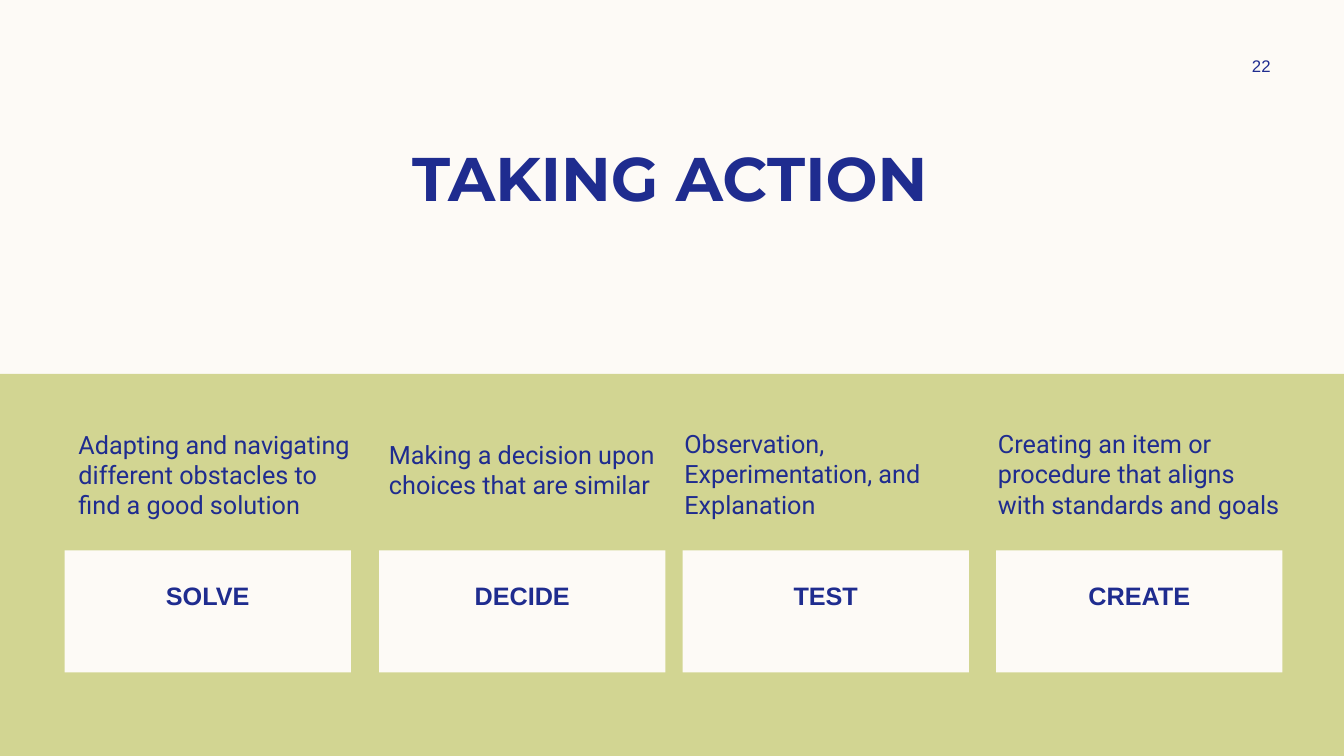
import pptx
import pptx.util
import pptx.dml.color
import pptx.enum.shapes
import pptx.enum.text

Inches = pptx.util.Inches
Pt = pptx.util.Pt
Align = pptx.enum.text.PP_ALIGN
Anchor = pptx.enum.text.MSO_ANCHOR

WIDTH, HEIGHT = 13.33, 7.5
COLOURS = {"paper": "FDFAF6", "olive": "D2D592", "navy": "1F2C8F"}
CARD_WIDTH, CARD_HEIGHT = 2.84, 1.21
CARD_TOP = 1.75
SUMMARY_WIDTH = 3
LINE_HEIGHT = 0.3

ACTIONS = [
    ("SOLVE", 0.64, "Adapting and navigating different obstacles to find a good solution", 0.68, 0.5, 3),
    ("DECIDE", 3.76, "Making a decision upon choices that are similar", 3.76, 0.6, 2),
    ("TEST", 6.77, "Observation, Experimentation, and Explanation", 6.69, 0.49, 3),
    ("CREATE", 9.88, "Creating an item or procedure that aligns with standards and goals", 9.8, 0.49, 3),
]


def colour(name):
    return pptx.dml.color.RGBColor.from_string(COLOURS[name])


def add_panel(slide, box, fill):
    panel = slide.shapes.add_shape(
        pptx.enum.shapes.MSO_SHAPE.RECTANGLE, *map(Inches, box))
    panel.shadow.inherit = False
    panel.fill.solid()
    panel.fill.fore_color.rgb = colour(fill)
    panel.line.fill.background()
    return panel


def write(holder, words, font, size, bold=False, align=Align.LEFT, anchor=Anchor.TOP):
    frame = holder.text_frame
    frame.word_wrap = True
    frame.vertical_anchor = anchor
    paragraph = frame.paragraphs[0]
    paragraph.alignment = align
    run = paragraph.add_run()
    run.text = words
    run.font.name = font
    run.font.size = Pt(size)
    run.font.bold = bold
    run.font.color.rgb = colour("navy")
    return frame


def add_words(slide, box, *words, **style):
    return write(slide.shapes.add_textbox(*map(Inches, box)), *words, **style)


def add_heading(slide, box):
    left, top, width, height = box
    add_words(slide, (left + 0.83, top + 0.56, width - 1.7, height - 2.1),
              "TAKING ACTION", "Montserrat", 44,
              bold=True, align=Align.CENTER, anchor=Anchor.BOTTOM)
    add_words(slide, (left + width - 1.36, top + 0.5, 1.08, 0.3),
              "22", "Arial", 12, align=Align.CENTER, anchor=Anchor.MIDDLE)


def add_card(slide, box, label):
    card = add_panel(slide, box, "paper")
    frame = write(card, label, "Arial", 18, bold=True, align=Align.CENTER)
    frame.margin_left = frame.margin_right = 0
    frame.margin_top = Inches(0.3)
    frame.margin_bottom = Inches(0.05)


def add_actions(slide, box):
    left, top, width, height = box
    add_panel(slide, box, "olive")
    for label, card_left, summary, summary_left, summary_top, lines in ACTIONS:
        add_card(slide, (left + card_left, top + CARD_TOP, CARD_WIDTH, CARD_HEIGHT), label)
        frame = add_words(
            slide,
            (left + summary_left, top + summary_top, SUMMARY_WIDTH, lines * LINE_HEIGHT + 0.11),
            summary, "Roboto", 18)
        frame.auto_size = pptx.enum.text.MSO_AUTO_SIZE.SHAPE_TO_FIT_TEXT


def main():
    deck = pptx.Presentation()
    deck.slide_width = Inches(WIDTH)
    deck.slide_height = Inches(HEIGHT)
    slide = deck.slides.add_slide(deck.slide_layouts[6])
    slide.background.fill.solid()
    slide.background.fill.fore_color.rgb = colour("paper")
    split = 3.71
    add_heading(slide, (0, 0, WIDTH, split))
    add_actions(slide, (0, split, WIDTH, HEIGHT - split))
    deck.save("out.pptx")


if __name__ == "__main__":
    main()
